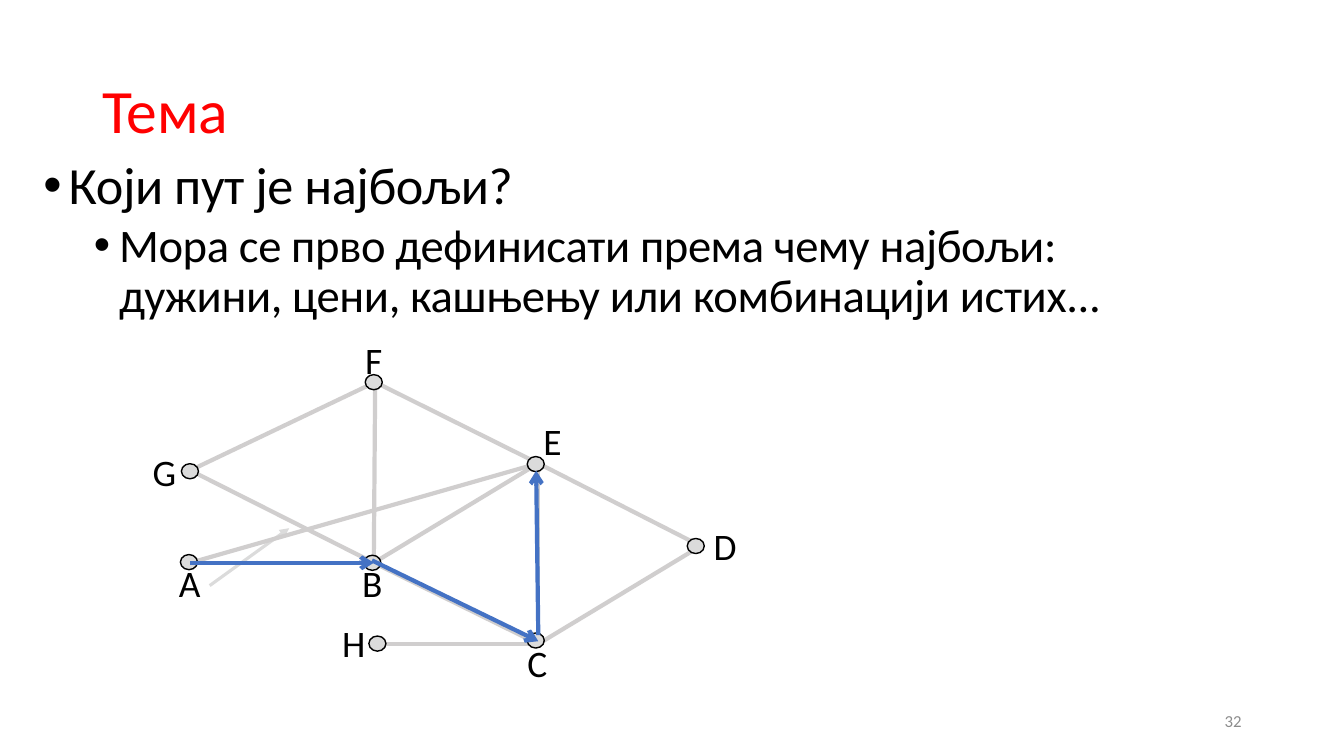
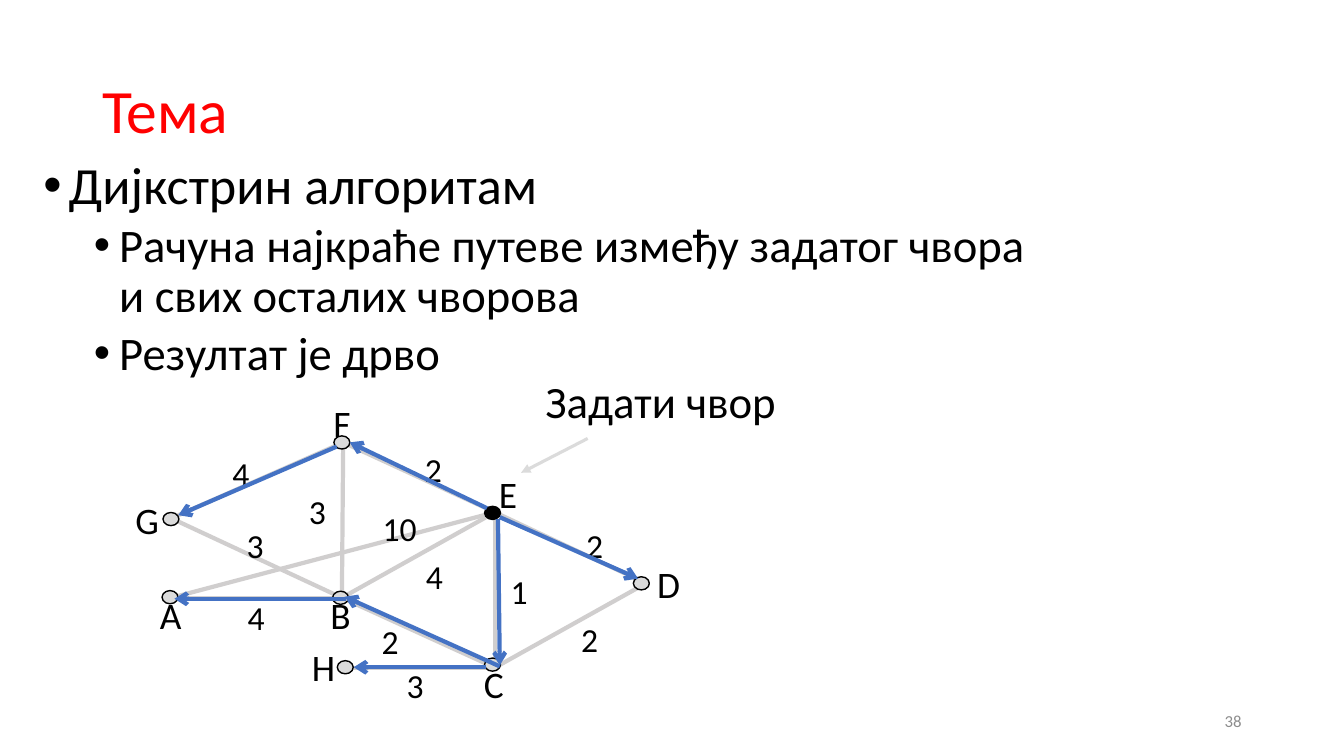
"""Two slides on shortest paths in a small graph."""
from pptx import Presentation
from pptx.dml.color import RGBColor as Rgb
from pptx.enum.shapes import MSO_CONNECTOR as Conn, MSO_SHAPE as Kind
from pptx.enum.text import MSO_ANCHOR as Anchor, PP_ALIGN as Align
from pptx.oxml.ns import qn
from pptx.util import Pt
from lxml.etree import SubElement as Sub

HUES = {"red": "FF0000", "black": "000000", "edge": "D0CECE",
        "node": "DBDBDB", "path": "4472C4", "foot": "8C8C8C"}
FONT = "Calibri"
NODES = {
    "D": ((500.5, 390), (497, 390), (517.3, 390)),
    "F": ((268, 273), (267, 273), (267, 256.7)),
    "B": ((267, 402), (266, 402), (266, 415.8)),
    "C": ((384.5, 460), (382.7, 457.5), (383.8, 473.4)),
    "E": ((384.5, 331), (382.7, 331.5), (394.6, 315)),
    "G": ((136, 336), (135.7, 336.6), (116.6, 336.6)),
    "H": ((267, 460), (269.6, 459.7), (252, 459)),
    "A": ((136, 402), (135, 401.5), (135.4, 415.8)),
}
EDGES = "AB BC CE BE AE BF BG GF FE ED CD CH".split()

SLIDES = [
    {
        "head": "Који пут је најбољи?",
        "points": ["Мора се прво дефинисати према чему најбољи:\n"
                   "дужини, цени, кашњењу или комбинацији истих..."],
        "width": 894, "track": -30, "page": "32",
        "start": (136, 402), "scale": (1, 1), "dot": (12.2, 10.8),
        "source": "", "hint": (149.8, 418.3, 206.6, 377.3),
        "notes": [],
        "paths": [(136, 402, 267, 402), (265.7, 400.3, 384.5, 458),
                  (384.5, 453.6, 383, 336.2)],
    },
    {
        "head": "Дијкстрин алгоритам",
        "points": ["Рачуна најкраће путеве између задатог чвора\n"
                   "и свих осталих чворова", "Резултат је дрво"],
        "width": 833, "track": 0, "page": "38",
        "start": (122.4, 427), "scale": (0.93, 0.86), "dot": (11.4, 9.4),
        "source": "E", "hint": (419.8, 313.2, 372.2, 337.7),
        "notes": [
            ("Задати чвор", 472, 289.4, 32, 0.8),
            ("2", 309.6, 334.8, 24, 1), ("1", 370.8, 422, 24, 1),
            ("10", 285.5, 377.3, 24, 1), ("2", 421.2, 456.5, 24, 1),
            ("2", 424.8, 389.5, 24, 1), ("4", 310.3, 411.1, 24, 1),
            ("2", 278.6, 457.9, 24, 1), ("4", 182.9, 440.6, 24, 1),
            ("4", 172.1, 337.7, 24, 1), ("3", 182.2, 389.5, 24, 1),
            ("3", 226.8, 365, 24, 1), ("3", 296.6, 489.6, 24, 1)],
        "paths": [(247, 427.7, 124.6, 427.7), (357, 476, 246.2, 426.2),
                  (355.7, 370.8, 357, 475.2), (240.5, 319, 127.4, 368),
                  (347, 476.6, 252.7, 476.6), (347.8, 363, 249.8, 316),
                  (357, 369.4, 455.8, 413.3)],
    },
]


def write(shape, text, size, hue="black", align=Align.LEFT, lead=1, gap=0,
          indent=0, track=0, wrap=True, anchor=Anchor.MIDDLE):
    frame = shape.text_frame
    para = frame.add_paragraph() if frame.text else frame.paragraphs[0]
    frame.word_wrap, frame.vertical_anchor = wrap, anchor
    para.text, para.alignment = text, align
    para.line_spacing, para.space_before = lead, Pt(gap)
    if indent:
        props = para._p.get_or_add_pPr()
        props.set("marL", str(Pt(indent)))
        props.set("indent", str(-Pt(18)))
        Sub(props, qn("a:buFont"), typeface="Arial")
        Sub(props, qn("a:buChar"), char="•")
    for run in para.runs:
        font = run.font
        font.name, font.size = FONT, Pt(size)
        font.color.rgb = Rgb.from_string(HUES[hue])
        if track:
            run._r.get_or_add_rPr().set("spc", str(track))


def link(slide, ends, hue, width=3, tip=None):
    line = slide.shapes.add_connector(Conn.STRAIGHT, *map(Pt, ends))
    line.line.color.rgb = Rgb.from_string(HUES[hue])
    line.line.width = Pt(width)
    if tip:
        Sub(line.line._get_or_add_ln(), qn("a:tailEnd"), type=tip)
    Sub(line._element.spPr, qn("a:effectLst"))


deck = Presentation()
deck.slide_width, deck.slide_height = Pt(960), Pt(540)

for data in SLIDES:
    slide = deck.slides.add_slide(deck.slide_layouts[5])
    shapes = slide.shapes
    title = shapes.title
    title.left, title.top, title.width, title.height = map(Pt, (66, 29, 828, 104))
    write(title, "Тема", 44, "red", lead=0.9)

    body = shapes.add_textbox(*map(Pt, (24, 110, data["width"], 376)))
    look = {"lead": 0.9, "track": data["track"], "anchor": Anchor.TOP}
    write(body, data["head"], 37.3, gap=10, indent=18, **look)
    for point in data["points"]:
        write(body, point, 33.3, gap=5, indent=54, **look)
    link(slide, data["hint"], "node", 2.25, "triangle")

    left, top = data["start"]
    wide, high = data["scale"]
    spots = {name: [(left + (x - 136) * wide, top + (y - 402) * high)
                    for x, y in places] for name, places in NODES.items()}
    for one, two in EDGES:
        link(slide, spots[one][0] + spots[two][0], "edge")

    width, height = data["dot"]
    for name, (_, (x, y), _) in spots.items():
        box = x - width / 2, y - height / 2, width, height
        dot = shapes.add_shape(Kind.OVAL, *map(Pt, box))
        dot.shadow.inherit = False
        dot.fill.solid()
        hue = "black" if name == data["source"] else "node"
        dot.fill.fore_color.rgb = Rgb.from_string(HUES[hue])
        dot.line.color.rgb = Rgb.from_string(HUES["black"])
        dot.line.width = Pt(1)

    names = [(name, *places[2], 26.7, 1) for name, places in spots.items()]
    for text, x, y, size, lead in names + data["notes"]:
        width = 16 + len(text) * size / 2
        box = x - width / 2, y - 20, width, 40
        write(shapes.add_textbox(*map(Pt, box)), text, size,
              align=Align.CENTER, lead=lead, wrap=False)
    for ends in data["paths"]:
        link(slide, ends, "path", tip="arrow")

    foot = shapes.add_textbox(*map(Pt, (678, 500.5, 216, 28.8)))
    write(foot, data["page"], 12, "foot", Align.RIGHT)

deck.save("out.pptx")
